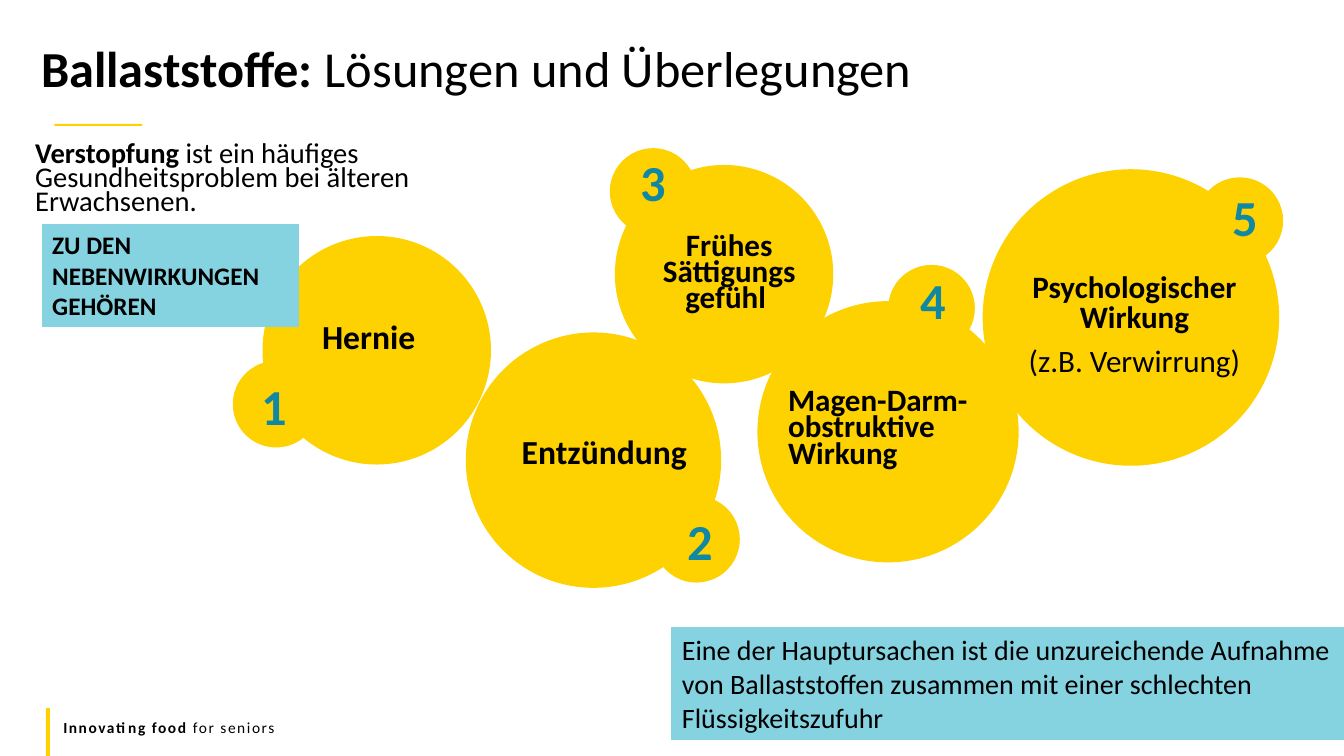
"""Build the slide on dietary fibre: solutions and considerations."""
from dataclasses import dataclass

import pptx
import pptx.util
import pptx.dml.color
import pptx.enum.shapes
import pptx.enum.text

SHAPES = pptx.enum.shapes.MSO_SHAPE
ANCHORS = pptx.enum.text.MSO_ANCHOR
CENTER = pptx.enum.text.PP_ALIGN.CENTER
LEFT = pptx.enum.text.PP_ALIGN.LEFT


@dataclass(frozen=True)
class Theme:
    font: str = "Calibri"
    ink: str = "000000"
    accent: str = "FFD100"
    bubble: str = "FED100"
    number: str = "1188A3"
    panel: str = "85D2E1"
    title_size: float = 36
    label_size: float = 24
    small_label_size: float = 22.2
    intro_size: float = 20.4
    cause_size: float = 20
    heading_size: float = 18
    footer_size: float = 11


THEME = Theme()
COLUMNS, ROWS = 160, 90
CELL = pptx.util.Inches(7.5) / ROWS
BADGE_RADIUS = 5.16
NUMBER_SIZE = (9.12, 9.6)

TITLE = [[("Ballaststoffe: ", True), ("Lösungen und Überlegungen", False)]]
INTRO = [[("Verstopfung ", True),
          ("ist ein häufiges Gesundheitsproblem bei älteren Erwachsenen.", False)]]
FOOTER = [[("Innovating food ", True), ("for seniors", False)]]
ACCENT_BARS = [(6.48, 14.76, 10.44, 0.24), (5.46, 84.3, 0.48, 5.7)]
PANELS = [
    ([[("ZU DEN NEBENWIRKUNGEN GEHÖREN", True)]],
     (5.04, 26.76, 30.48, 12.12), THEME.heading_size),
    ([[("Eine der Hauptursachen ist die unzureichende Aufnahme von Ballaststoffen "
        "zusammen mit einer schlechten Flüssigkeitszufuhr", False)]],
     (80, 74.76, 80, 13.32), THEME.cause_size),
]
EFFECTS = [
    dict(text=[[("Hernie ", True)]], circle=(44.85, 41.7, 13.6),
         badge=(32.88, 48.12), number=(32.64, 44.88),
         label=(31.44, 37.56, 22.8, 9.12),
         style=dict(size=THEME.label_size, spacing=0.9, align=CENTER, indent=3)),
    dict(text=[[("Entzündung", True)]], circle=(70.65, 54.78, 15.2),
         badge=(82.92, 64.2), number=(83.4, 60.96),
         label=(59.04, 51.24, 25.8, 11.04),
         style=dict(size=THEME.label_size, spacing=0.9, align=CENTER)),
    dict(text=[[("Frühes Sättigungsgefühl ", True)]], circle=(86.2, 32.64, 13),
         badge=(77.76, 22.8), number=(77.76, 18.24),
         label=(73.92, 27.48, 22.8, 11.52),
         style=dict(size=THEME.small_label_size, spacing=0.7, align=CENTER, indent=3)),
    dict(text=[[("Magen-Darm-obstruktive Wirkung", True)]], circle=(105.72, 51.4, 15.55),
         badge=(110.9, 36.7), number=(111.12, 32.28),
         label=(89.64, 45.96, 32.16, 11.52),
         style=dict(size=THEME.small_label_size, spacing=0.7, indent=3)),
    dict(text=[[("Psychologischer Wirkung", True)], [("(z.B. Verwirrung)", False)]],
         circle=(134.64, 37.8, 17.65), badge=(147.6, 26.28), number=(148.2, 22.44),
         label=(117.48, 32.16, 32.16, 14.64),
         style=dict(size=THEME.small_label_size, spacing=0.8, align=CENTER, indent=3)),
]


def grid(*cells):
    return [round(cell * CELL) for cell in cells]


def rgb(color):
    return pptx.dml.color.RGBColor.from_string(color)


def add_filled(slide, kind, box, color):
    shape = slide.shapes.add_shape(kind, *grid(*box))
    shape.shadow.inherit = False
    shape.fill.solid()
    shape.fill.fore_color.rgb = rgb(color)
    shape.line.fill.background()
    return shape


def add_circle(slide, x, y, radius):
    box = (x - radius, y - radius, 2 * radius, 2 * radius)
    add_filled(slide, SHAPES.OVAL, box, THEME.bubble)


def write(shape, text, *, size, color=THEME.ink, align=LEFT, spacing=1.0,
          indent=0, anchor=ANCHORS.TOP, tracking=0):
    frame = shape.text_frame
    frame.word_wrap = True
    frame.vertical_anchor = anchor
    for index, runs in enumerate(text):
        paragraph = frame.add_paragraph() if index else frame.paragraphs[0]
        paragraph.alignment = align
        paragraph.line_spacing = spacing
        if index:
            paragraph.space_before = pptx.util.Pt(10)
        if indent:
            paragraph._p.get_or_add_pPr().set("marL", str(grid(indent)[0]))
        for words, bold in runs:
            run = paragraph.add_run()
            run.text = words
            run.font.name = THEME.font
            run.font.size = pptx.util.Pt(size)
            run.font.bold = bold
            run.font.color.rgb = rgb(color)
            if tracking:
                run.font._element.set("spc", str(round(tracking * 100)))


def add_text(slide, text, box, **style):
    write(slide.shapes.add_textbox(*grid(*box)), text, **style)


def main():
    presentation = pptx.Presentation()
    presentation.slide_width, presentation.slide_height = grid(COLUMNS, ROWS)
    slide = presentation.slides.add_slide(presentation.slide_layouts[6])

    for bar in ACCENT_BARS:
        add_filled(slide, SHAPES.RECTANGLE, bar, THEME.accent)
    for effect in EFFECTS:
        add_circle(slide, *effect["circle"])
        add_circle(slide, *effect["badge"], BADGE_RADIUS)
    add_text(slide, FOOTER, (6.36, 84.84, 144, 3.48), size=THEME.footer_size, tracking=1.1)
    add_text(slide, INTRO, (0, 16.56, 56.64, 9.84), size=THEME.intro_size,
             spacing=0.7, indent=3)
    for position, effect in enumerate(EFFECTS, start=1):
        add_text(slide, effect["text"], effect["label"], **effect["style"])
        middle, top = effect["number"]
        add_text(slide, [[(str(position), True)]],
                 (middle - NUMBER_SIZE[0] / 2, top, *NUMBER_SIZE),
                 size=THEME.title_size, color=THEME.number, align=CENTER, spacing=0.9)
    add_text(slide, TITLE, (3.72, 4.8, 140.76, 7.68), size=THEME.title_size,
             spacing=0.8, anchor=ANCHORS.MIDDLE)
    for text, box, size in PANELS:
        panel = add_filled(slide, SHAPES.RECTANGLE, box, THEME.panel)
        panel.line.color.rgb = rgb(THEME.panel)
        panel.line.width = pptx.util.Pt(0.75)
        write(panel, text, size=size)

    presentation.save("out.pptx")


if __name__ == "__main__":
    main()
